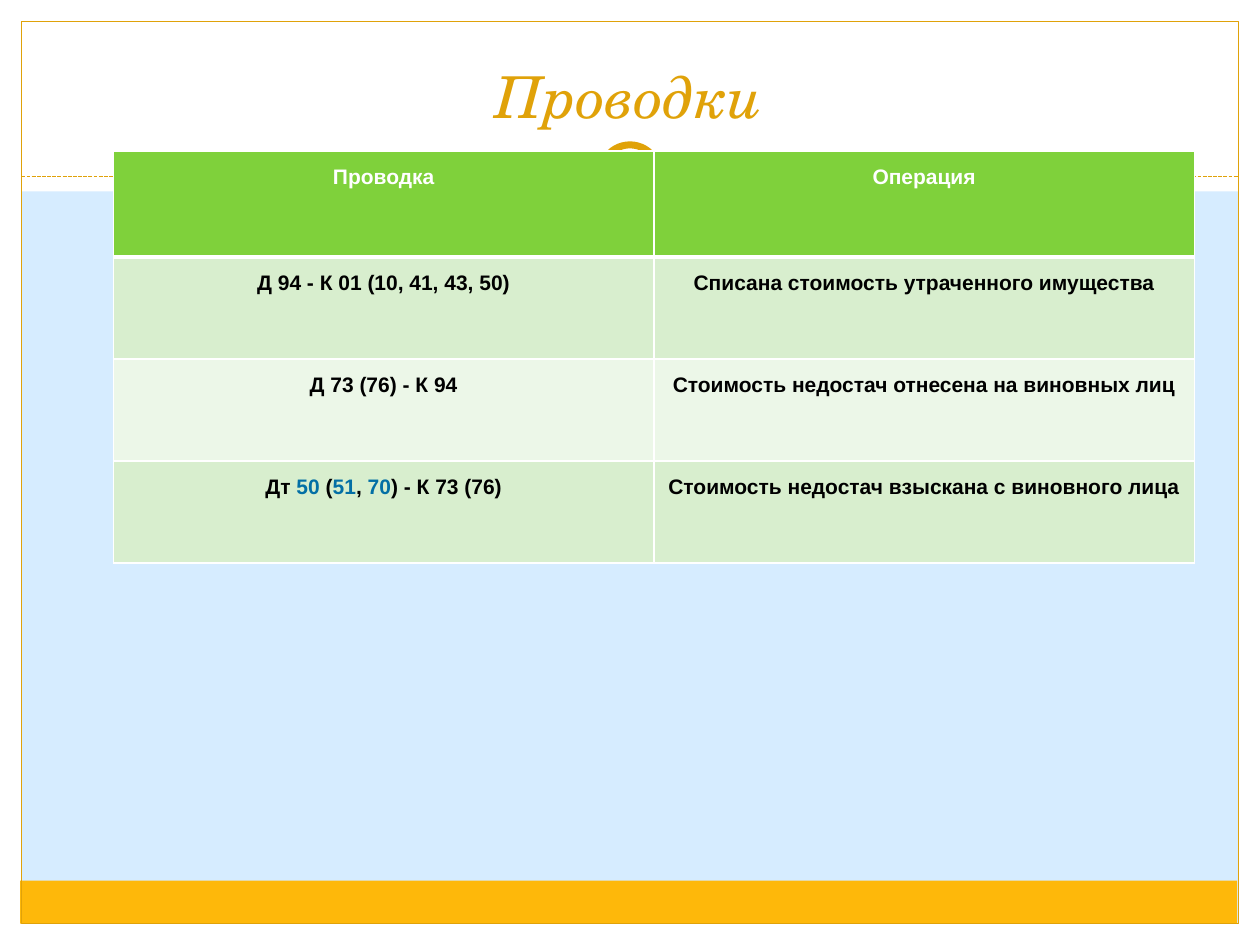
from lxml import etree
from pptx import Presentation
from pptx.dml.color import RGBColor
from pptx.enum.dml import MSO_LINE
from pptx.enum.shapes import MSO_CONNECTOR, MSO_SHAPE
from pptx.enum.text import MSO_ANCHOR, PP_ALIGN
from pptx.oxml.ns import qn
from pptx.util import Inches, Pt

RECT, OVAL = MSO_SHAPE.RECTANGLE, MSO_SHAPE.OVAL
LINE, DASH = MSO_CONNECTOR.STRAIGHT, MSO_LINE.SQUARE_DOT
MID, LOW = PP_ALIGN.CENTER, MSO_ANCHOR.BOTTOM

WHITE, BLACK, GOLD, LINK = "FFFFFF", "000000", "E0A209", "036FA5"
SKY, AMBER, GREEN = "D6ECFF", "FEB80A", "7FD13B"
BANDS = ["D8EECE", "ECF7E8"]

TITLE = "Проводки"
DECOR = [
    (RECT, (0, 7.33, 10, 0.17), WHITE, None),
    (RECT, (0, 0, 10, 1.52), WHITE, None),
    (RECT, (0, 0, 0.17, 7.5), WHITE, None),
    (RECT, (9.83, 0, 0.17, 7.5), WHITE, None),
    (RECT, (0.16, 6.99, 9.66, 0.34), AMBER, None),
    (RECT, (0.17, 0.17, 9.66, 7.16), None, 0.75),
]
RINGS = [
    (OVAL, (4.67, 1.05, 0.67, 0.67), WHITE, None),
    (OVAL, (4.77, 1.15, 0.46, 0.46), WHITE, 4),
]
ROWS = [
    (["Проводка"], ["Операция"]),
    (["Д 94 - К 01 (10, 41, 43, 50)"],
     ["Списана стоимость утраченного имущества"]),
    (["Д 73 (76) - К 94"],
     ["Стоимость недостач отнесена на виновных лиц"]),
    (["Дт ", "50", " (", "51", ", ", "70", ") - К 73 (76)"],
     ["Стоимость недостач взыскана с виновного лица"]),
]
HIGHS = [0.84, 0.81, 0.81, 0.81]
WIDE = 4.29


def rgb(code):
    return RGBColor.from_string(code)


def paint(fill, code):
    if code:
        fill.solid()
        fill.fore_color.rgb = rgb(code)
    else:
        fill.background()


def draw(shapes, kind, box, fill, width):
    shape = shapes.add_shape(kind, *map(Inches, box))
    shape.shadow.inherit = False
    paint(shape.fill, fill)
    if width:
        shape.line.color.rgb = rgb(GOLD)
        shape.line.width = Pt(width)
    else:
        shape.line.fill.background()


def add_run(para, text, font, size, code):
    run = para.add_run()
    run.text = text
    run.font.name = font
    run.font.size = Pt(size)
    run.font.color.rgb = rgb(code)
    return run


def edge(cell, widths):
    props = cell._tc.get_or_add_tcPr()
    for spot, (side, width) in enumerate(zip("LRTB", widths)):
        line = etree.Element(qn("a:ln" + side), w=str(Pt(width)))
        fill = etree.SubElement(line, qn("a:solidFill"))
        etree.SubElement(fill, qn("a:srgbClr"), val=WHITE)
        props.insert(spot, line)


def fill_cell(cell, row, texts):
    cell.margin_left = cell.margin_right = Inches(0.09)
    cell.margin_top = cell.margin_bottom = Inches(0.05)
    paint(cell.fill, BANDS[(row - 1) % 2] if row else GREEN)
    edge(cell, (1, 1, 3 if row == 1 else 1, 1 if row else 3))
    para = cell.text_frame.paragraphs[0]
    para.alignment = MID
    para.line_spacing = Pt(18)
    para.space_after = Pt(15 if len(texts) == 1 else 0)
    for spot, text in enumerate(texts):
        code = LINK if spot % 2 else BLACK if row else WHITE
        add_run(para, text, "Arial", 12, code).font.bold = True


def main():
    deck = Presentation()
    deck.slide_width, deck.slide_height = Inches(10), Inches(7.5)
    slide = deck.slides.add_slide(deck.slide_layouts[5])
    paint(slide.background.fill, SKY)
    shapes = slide.shapes

    for item in DECOR:
        draw(shapes, *item)
    rule = shapes.add_connector(LINE, *map(Inches, (0.17, 1.4, 9.83, 1.4)))
    rule.line.color.rgb = rgb(GOLD)
    rule.line.width = Pt(0.75)
    rule.line.dash_style = DASH
    etree.SubElement(rule.element.spPr, qn("a:effectLst"))
    for item in RINGS:
        draw(shapes, *item)

    title = shapes.title
    title.left, title.top = Inches(0.33), Inches(0.25)
    title.width, title.height = Inches(9.33), Inches(0.83)
    title.text_frame.vertical_anchor = LOW
    para = title.text_frame.paragraphs[0]
    para.alignment = MID
    add_run(para, TITLE, "TeX Gyre Schola", 33, GOLD).font.italic = True
    shapes.element.append(title.element)

    box = (0.9, 1.2, 2 * WIDE, sum(HIGHS))
    table = shapes.add_table(len(ROWS), 2, *map(Inches, box)).table
    for col in table.columns:
        col.width = Inches(WIDE)
    for row, (cells, high) in enumerate(zip(ROWS, HIGHS)):
        table.rows[row].height = Inches(high)
        for col, texts in enumerate(cells):
            fill_cell(table.cell(row, col), row, texts)

    deck.save("out.pptx")


if __name__ == "__main__":
    main()
